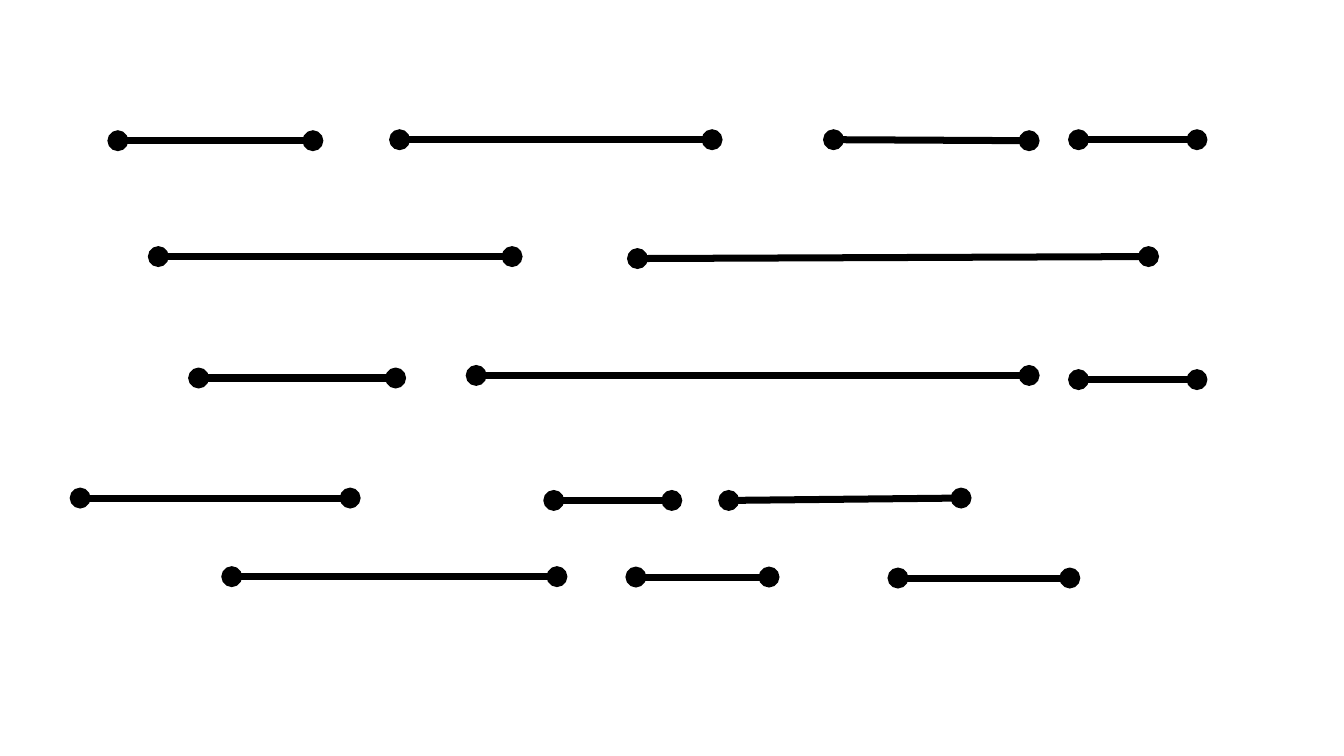
from pptx import Presentation
from pptx.dml.color import RGBColor
from pptx.enum.shapes import MSO_CONNECTOR as CONN
from pptx.oxml.ns import qn
from pptx.util import Cm, Pt
from lxml.etree import SubElement

BLACK = RGBColor(0x00, 0x00, 0x00)
LEFT = 4.04

# Row top, then its intervals: start x, end x, start drop, end drop (cm).
# The x values count from LEFT, the drops from the row top.
ROWS = [
    (7.04, [(1.9, 11.73, 0.05, 0.05), (16.1, 31.85, 0, 0),
            (37.97, 47.83, 0, 0.05), (50.32, 56.29, 0, 0)]),
    (12.93, [(3.94, 21.77, 0, 0), (28.09, 53.85, 0.1, 0)]),
    (18.92, [(5.97, 15.9, 0.13, 0.13), (19.96, 47.83, 0, 0),
             (50.32, 56.29, 0.21, 0.21)]),
    (25.1, [(0, 13.61, 0, 0), (23.87, 29.82, 0.12, 0.12),
            (32.69, 44.4, 0.12, 0)]),
    (29.06, [(7.64, 24.03, 0, 0), (28.01, 34.72, 0.02, 0.02),
             (41.22, 49.88, 0.07, 0.07)]),
]


def add_interval(slide, x1, y1, x2, y2):
    """Draw a thick line with a round dot at each end."""
    line = slide.shapes.add_connector(
        CONN.STRAIGHT, Cm(x1), Cm(y1), Cm(x2), Cm(y2))
    line.line.color.rgb = BLACK
    line.line.width = Pt(10)
    ln = line.line._get_or_add_ln()
    for end in ("a:headEnd", "a:tailEnd"):
        SubElement(ln, qn(end), type="oval")
    SubElement(line._element.spPr, qn("a:effectLst"))


def add_row(slide, left, top, intervals):
    for start, end, drop1, drop2 in intervals:
        add_interval(slide, left + start, top + drop1, left + end, top + drop2)


def main():
    prs = Presentation()
    prs.slide_width, prs.slide_height = Cm(67.74), Cm(38.1)
    slide = prs.slides.add_slide(prs.slide_layouts[6])
    for top, intervals in ROWS:
        add_row(slide, LEFT, top, intervals)
    prs.save("out.pptx")


if __name__ == "__main__":
    main()
